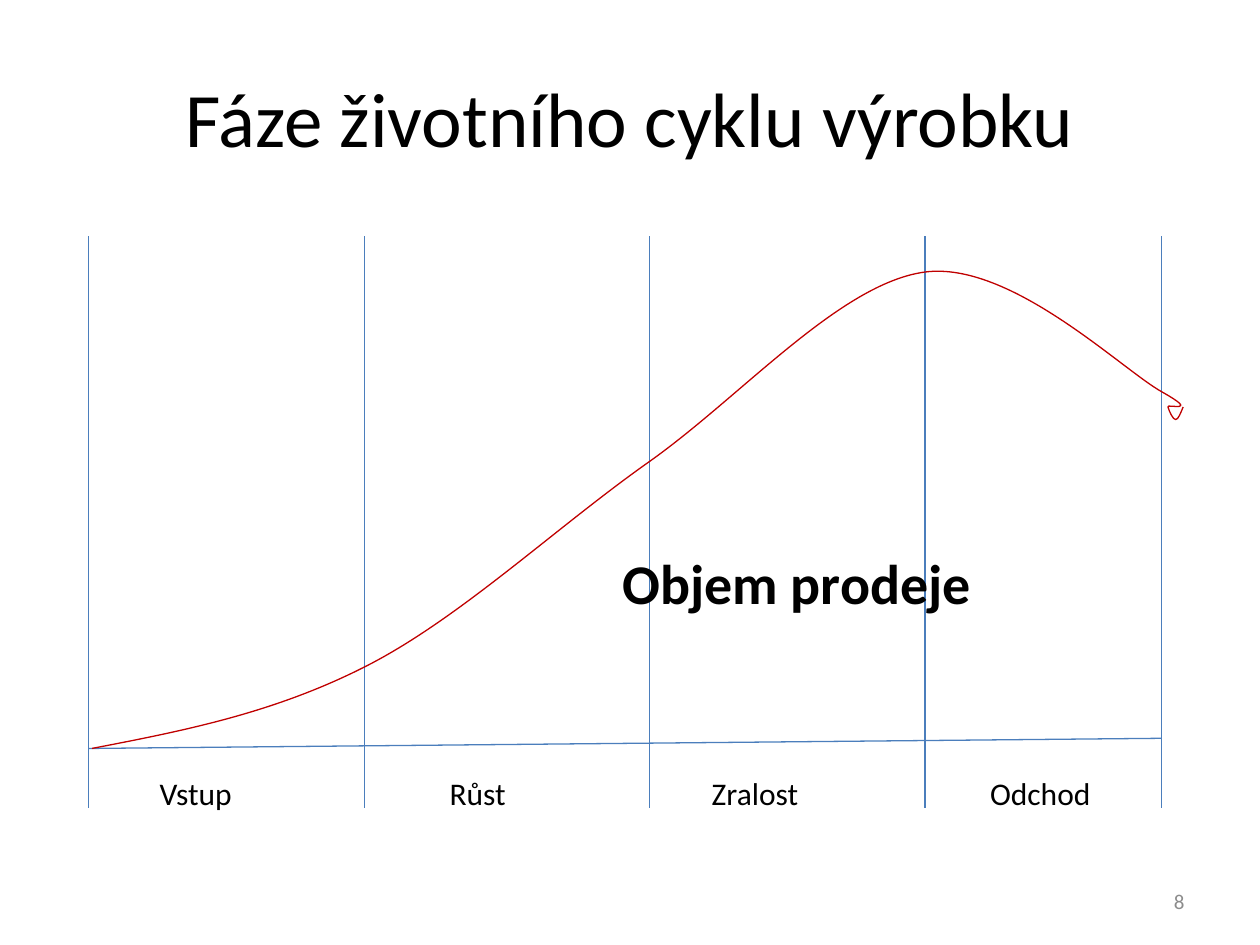
import pptx
import pptx.util
import pptx.dml.color
import pptx.enum.shapes
import pptx.enum.text
import pptx.oxml.ns
import pptx.oxml.xmlchemy

Pt = pptx.util.Pt
ALIGN = pptx.enum.text.PP_ALIGN
ANCHOR = pptx.enum.text.MSO_ANCHOR
qn = pptx.oxml.ns.qn
make = pptx.oxml.xmlchemy.OxmlElement

COLORS = {"text": "000000", "axis": "4B7EBC", "curve": "C00000", "page": "8C8C8C"}

# Phase borders, and each phase with the left edge and width of its label
BORDERS = [50.4, 208.1, 371.2, 528.5, 663.8]
TOP, FOOT = 134.7, 461.5
PHASES = [("Vstup", 84.2, 71.3), ("Růst", 249.8, 59),
          ("Zralost", 399.6, 80.6), ("Odchod", 558.7, 83.5)]

# Start of the sales curve, then two handles and an end for each stretch
START = (52.6, 427.7)
BENDS = [
    (105.1, 417.6), (157, 407.5), (210.2, 380.2),
    (263.5, 352.8), (318.2, 301), (371.5, 263.5),
    (424.1, 226.1), (480.2, 162), (528.5, 155.5),
    (577.4, 149), (640.8, 211), (663.8, 223.9),
    (686.9, 236.9), (666, 230.4), (667.4, 232.6),
    (668.2, 235.4), (670.3, 239.8), (671.8, 239.8),
    (673.2, 239.8), (674.6, 236.2), (676.1, 232.6),
]


def paint(name):
    return pptx.dml.color.RGBColor.from_string(COLORS[name])


def write(frame, text, size=18, color="text", bold=False,
          align=ALIGN.LEFT, anchor=ANCHOR.TOP, wrap=False):
    frame.word_wrap = wrap
    frame.vertical_anchor = anchor
    para = frame.paragraphs[0]
    para.alignment = align
    run = para.add_run()
    run.text = text
    font = run.font
    font.name, font.size, font.bold = "Calibri", Pt(size), bold
    font.color.rgb = paint(color)


def label(slide, text, left, top, width, height, **style):
    box = slide.shapes.add_textbox(Pt(left), Pt(top), Pt(width), Pt(height))
    write(box.text_frame, text, **style)


def rule(slide, *ends):
    kind = pptx.enum.shapes.MSO_CONNECTOR.STRAIGHT
    line = slide.shapes.add_connector(kind, *[Pt(v) for v in ends])
    line.line.color.rgb = paint("axis")
    line.line.width = Pt(0.75)
    line._element.spPr.append(make("a:effectLst"))


def curve(slide, start, bends):
    pen = slide.shapes.build_freeform(Pt(start[0]), Pt(start[1]))
    pen.add_line_segments([(Pt(x), Pt(y)) for x, y in bends], close=False)
    shape = pen.convert_to_shape()
    # Join every three straight segments into one cubic Bézier
    segs = list(shape._element.iter(qn("a:lnTo")))
    for i in range(0, len(segs), 3):
        cubic = make("a:cubicBezTo")
        segs[i].addprevious(cubic)
        for seg in segs[i:i + 3]:
            cubic.append(seg[0])
            seg.getparent().remove(seg)
    shape.shadow.inherit = False
    shape.fill.background()
    shape.line.color.rgb = paint("curve")
    shape.line.width = Pt(0.75)


def main():
    deck = pptx.Presentation()
    deck.slide_width, deck.slide_height = Pt(720), Pt(540)
    slide = deck.slides.add_slide(deck.slide_layouts[5])

    # Title
    title = slide.shapes.title
    title.left, title.top = Pt(36), Pt(21.6)
    title.width, title.height = Pt(648), Pt(90)
    write(title.text_frame, "Fáze životního cyklu výrobku", size=44,
          align=ALIGN.CENTER, anchor=ANCHOR.MIDDLE, wrap=True)

    # Base line and phase borders
    rule(slide, BORDERS[0], 427.7, BORDERS[-1], 421.9)
    for x in BORDERS:
        rule(slide, x, FOOT, x, TOP)

    # Phase names and sales curve
    for name, left, width in PHASES:
        label(slide, name, left, 438.5, width, 28.8)
    label(slide, "Objem prodeje", 348.5, 309.6, 247.7, 46, size=32, bold=True)
    curve(slide, START, BENDS)

    # Page number
    label(slide, "8", 516.2, 500.4, 167.8, 28.8, size=12, color="page",
          align=ALIGN.RIGHT, anchor=ANCHOR.MIDDLE, wrap=True)

    deck.save("out.pptx")


if __name__ == "__main__":
    main()
